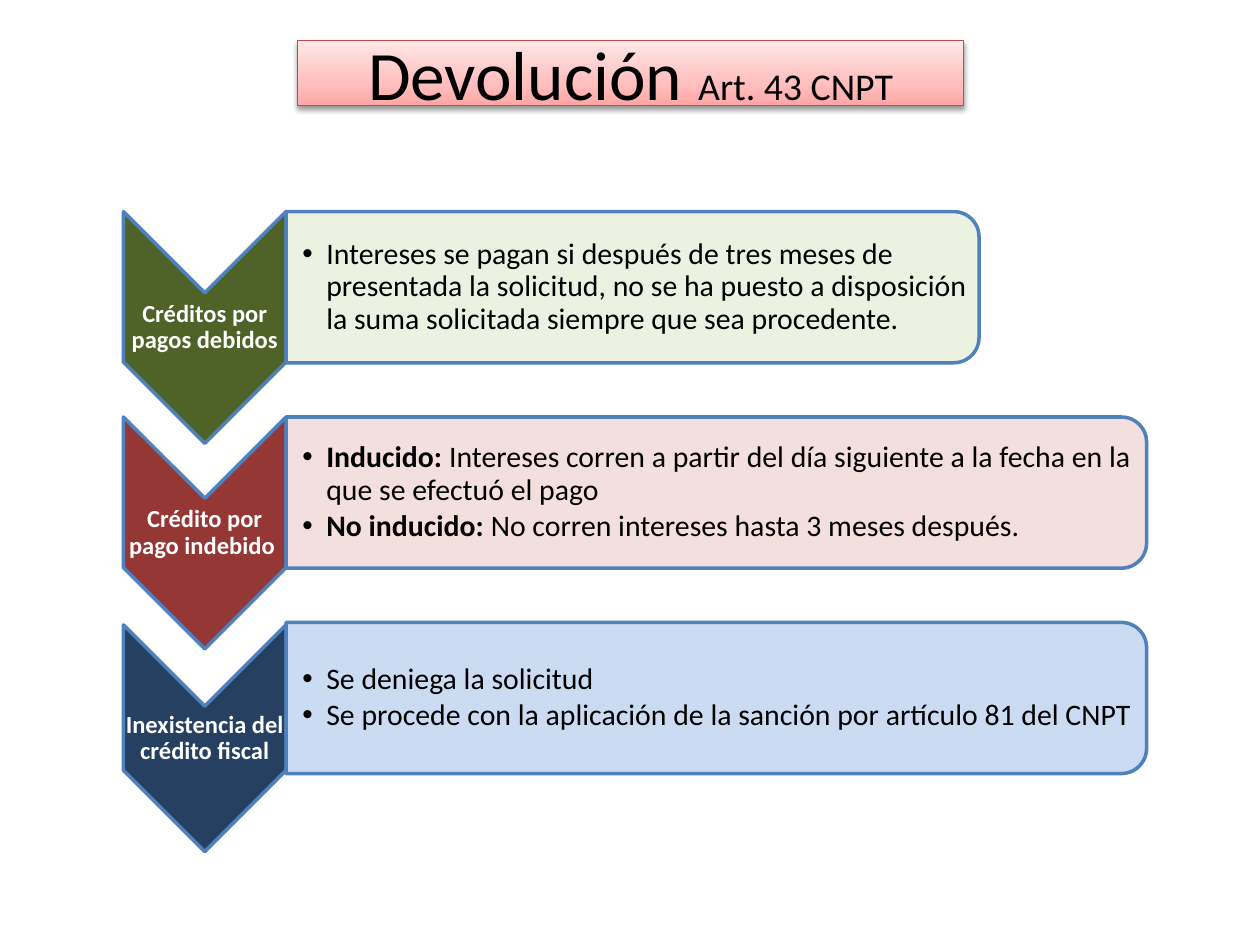
"""Build a slide on tax refunds: three chevrons, each leading to a panel of rules."""
from copy import deepcopy

from lxml import etree
from pptx import Presentation
from pptx.dml.color import RGBColor
from pptx.enum.shapes import MSO_SHAPE
from pptx.enum.text import MSO_ANCHOR, PP_ALIGN
from pptx.oxml.ns import qn
from pptx.util import Inches, Pt

RECTANGLE = MSO_SHAPE.RECTANGLE
CHEVRON = MSO_SHAPE.CHEVRON
PANEL = MSO_SHAPE.ROUND_2_SAME_RECTANGLE
MIDDLE = MSO_ANCHOR.MIDDLE
CENTER, LEFT = PP_ALIGN.CENTER, PP_ALIGN.LEFT

BLACK = RGBColor(0x00, 0x00, 0x00)
WHITE = RGBColor(0xFF, 0xFF, 0xFF)
BLUE = RGBColor(0x4F, 0x81, 0xBD)
RED = RGBColor(0xBF, 0x4C, 0x48)
TITLE_STOPS = [
    (0, RGBColor(0xFF, 0xA6, 0xA5)),
    (0.35, RGBColor(0xFF, 0xC0, 0xBF)),
    (1, RGBColor(0xFF, 0xE7, 0xE7)),
]

TITLE = [("Devolución ", 39.6, False), ("Art. 43 CNPT", 21.6, False)]
ROWS = [
    {
        "label": "Créditos por pagos debidos",
        "dark": RGBColor(0x4F, 0x62, 0x28),
        "light": RGBColor(0xEB, 0xF1, 0xDE),
        "panel_width": 5.5,
        "chevron_length": 1.84,
        "rules": [
            ("", "Intereses se pagan si después de tres meses de presentada la solicitud, "
                 "no se ha puesto a disposición la suma solicitada siempre que sea procedente."),
        ],
    },
    {
        "label": "Crédito por pago indebido ",
        "dark": RGBColor(0x95, 0x37, 0x35),
        "light": RGBColor(0xF2, 0xDC, 0xDB),
        "panel_width": 6.83,
        "chevron_length": 1.84,
        "rules": [
            ("Inducido: ", "Intereses corren a partir del día siguiente a la fecha en la "
                           "que se efectuó el pago"),
            ("No inducido: ", "No corren intereses hasta 3 meses después."),
        ],
    },
    {
        "label": "Inexistencia del crédito fiscal",
        "dark": RGBColor(0x25, 0x40, 0x61),
        "light": RGBColor(0xC6, 0xD9, 0xF1),
        "panel_width": 6.83,
        "chevron_length": 1.8,
        "rules": [
            ("", "Se deniega la solicitud"),
            ("", "Se procede con la aplicación de la sanción por artículo 81 del CNPT"),
        ],
    },
]

FIRST_CENTER, PITCH = 2.28, 1.63
CHEVRON_LEFT, CHEVRON_WIDTH, CHEVRON_DROP = 0.98, 1.29, 0.32
PANEL_LEFT, PANEL_HEIGHT = 2.27, 1.2
RULES_HEIGHT, LABEL_HEIGHT = 1.08, 0.55
LABEL_SIZE, RULE_SIZE = 14, 17


def add_spans(para, spans, color):
    for text, size, bold in spans:
        span = para.add_run()
        span.text = text
        span.font.name = "Calibri"
        span.font.size = Pt(size)
        span.font.bold = bold
        span.font.color.rgb = color


def add_quarter_turned(page, kind, left, center, width, height, color):
    middle = left + width / 2
    shape = page.shapes.add_shape(
        kind, Inches(middle - height / 2), Inches(center - width / 2),
        Inches(height), Inches(width))
    shape.rotation = 90
    shape.shadow.inherit = False
    shape.fill.solid()
    shape.fill.fore_color.rgb = color
    shape.line.color.rgb = BLUE
    shape.line.width = Pt(2)
    return shape


def add_text_frame(page, left, center, width, height, left_inset):
    box = page.shapes.add_textbox(
        Inches(left), Inches(center - height / 2), Inches(width), Inches(height))
    frame = box.text_frame
    frame.word_wrap = True
    frame.vertical_anchor = MIDDLE
    frame.margin_left = Inches(left_inset)
    frame.margin_top = frame.margin_right = frame.margin_bottom = Inches(0.01)
    return frame


def add_bullet(para):
    properties = para._p.get_or_add_pPr()
    properties.set("marL", str(Inches(0.19)))
    properties.set("indent", str(-Inches(0.19)))
    etree.SubElement(properties, qn("a:buFont"), typeface="Arial")
    etree.SubElement(properties, qn("a:buChar"), char="•")


def add_title(page):
    shape = page.shapes.add_shape(
        RECTANGLE, Inches(2.36), Inches(0.32), Inches(5.29), Inches(0.52))
    shape.line.color.rgb = RED
    shape.line.width = Pt(0.75)
    shape.fill.gradient()
    shape.fill.gradient_angle = 90
    stop_list = shape._element.spPr.find(".//" + qn("a:gsLst"))
    stop_list.append(deepcopy(stop_list[0]))
    for stop, (position, color) in zip(shape.fill.gradient_stops, TITLE_STOPS):
        stop.position = position
        stop.color.rgb = color
    shape.shadow.inherit = False
    effects = shape._element.spPr.find(qn("a:effectLst"))
    shadow = etree.SubElement(
        effects, qn("a:outerShdw"), blurRad=str(Pt(3.1)), dist=str(Pt(1.6)),
        dir="5400000", rotWithShape="0")
    tint = etree.SubElement(shadow, qn("a:srgbClr"), val=str(BLACK))
    etree.SubElement(tint, qn("a:alpha"), val="38000")
    frame = shape.text_frame
    frame.word_wrap = True
    frame.vertical_anchor = MIDDLE
    para = frame.paragraphs[0]
    para.alignment = CENTER
    add_spans(para, TITLE, BLACK)


def add_row(page, row, center):
    chevron_center = center + CHEVRON_DROP
    add_quarter_turned(page, CHEVRON, CHEVRON_LEFT, chevron_center,
                       CHEVRON_WIDTH, row["chevron_length"], row["dark"])
    frame = add_text_frame(page, CHEVRON_LEFT, chevron_center,
                           CHEVRON_WIDTH, LABEL_HEIGHT, 0.01)
    para = frame.paragraphs[0]
    para.alignment = CENTER
    para.line_spacing = 0.9
    add_spans(para, [(row["label"], LABEL_SIZE, True)], WHITE)

    width = row["panel_width"]
    panel = page.shapes
    panel = add_panel(page, center, width, row["light"])
    frame = add_text_frame(page, PANEL_LEFT, center, width - 0.06, RULES_HEIGHT, 0.13)
    for index, (lead, text) in enumerate(row["rules"]):
        para = frame.add_paragraph() if index else frame.paragraphs[0]
        para.alignment = LEFT
        para.line_spacing = 0.9
        para.space_after = Pt(2.55)
        add_bullet(para)
        spans = [(lead, RULE_SIZE, True)] if lead else []
        add_spans(para, spans + [(text, RULE_SIZE, False)], BLACK)


def add_panel(page, center, width, color):
    panel = add_quarter_turned(page, PANEL, PANEL_LEFT, center, width, PANEL_HEIGHT, color)
    tint = panel._element.spPr.find(qn("a:solidFill"))[0]
    etree.SubElement(tint, qn("a:alpha"), val="90000")


def main():
    deck = Presentation()
    deck.slide_width, deck.slide_height = Inches(10), Inches(7.5)
    page = deck.slides.add_slide(deck.slide_layouts[6])
    add_title(page)
    for index, row in enumerate(ROWS):
        add_row(page, row, FIRST_CENTER + index * PITCH)
    deck.save("out.pptx")


if __name__ == "__main__":
    main()
